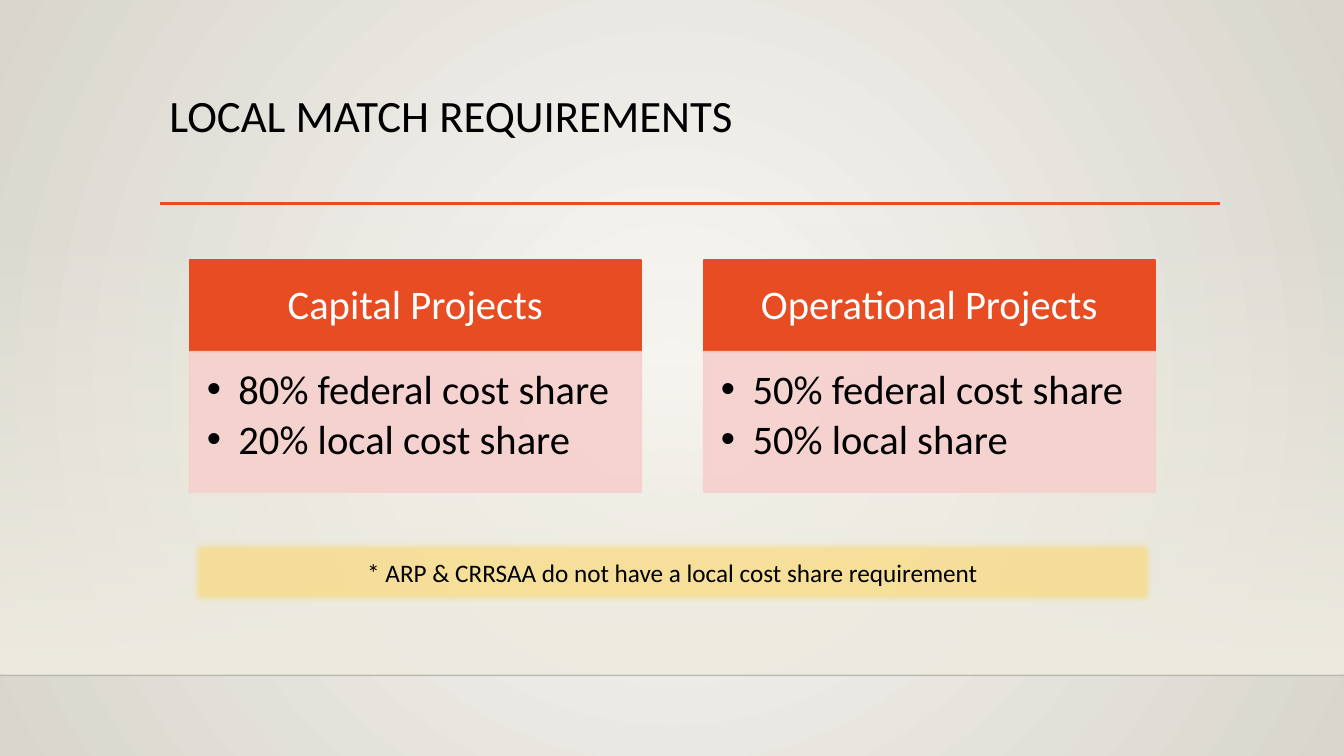
import lxml.etree
import pptx
import pptx.dml.color
import pptx.enum.shapes
import pptx.enum.text
import pptx.oxml.ns
import pptx.util

Pt = pptx.util.Pt
qn = pptx.oxml.ns.qn
PP_ALIGN = pptx.enum.text.PP_ALIGN
ANCHOR = pptx.enum.text.MSO_ANCHOR

FONT = "Calibri"
COLORS = {
    "center": "F9F8F5", "edge": "D8D6CC", "floor": "EEECE1", "horizon": "000001",
    "accent": "E84C22", "pale": "F6D0CD", "note": "FFD147",
    "text": "000000", "white": "FFFFFF",
}
PROJECTS = [
    ("Capital Projects", ["80% federal cost share", "20% local cost share"]),
    ("Operational Projects", ["50% federal cost share", "50% local share"]),
]


def rgb(name):
    return pptx.dml.color.RGBColor.from_string(COLORS[name])


def add_element(parent, tag, **attributes):
    return lxml.etree.SubElement(parent, qn(tag), attributes)


def set_alpha(color_element, percent):
    add_element(color_element, "a:alpha", val=str(percent * 1000))


def set_gradient(fill, start, end):
    fill.gradient()
    for stop, name, position in zip(fill.gradient_stops, (start, end), (0, 1)):
        stop.color.rgb = rgb(name)
        stop.position = position


def add_rect(slide, box, fill=None, line=None, alpha=100):
    rect = slide.shapes.add_shape(
        pptx.enum.shapes.MSO_SHAPE.RECTANGLE, *(Pt(length) for length in box))
    rect.shadow.inherit = False
    if fill:
        rect.fill.solid()
        rect.fill.fore_color.rgb = rgb(fill)
    if line:
        rect.line.color.rgb = rgb(line)
        rect.line.width = Pt(1.25)
    else:
        rect.line.fill.background()
    if alpha < 100:
        for color in rect._element.spPr.iter(qn("a:srgbClr")):
            set_alpha(color, alpha)
    return rect


def add_line(slide, left, right, y, color, width, alpha=100):
    line = slide.shapes.add_connector(
        pptx.enum.shapes.MSO_CONNECTOR.STRAIGHT, Pt(left), Pt(y), Pt(right), Pt(y))
    line.line.color.rgb = rgb(color)
    line.line.width = Pt(width)
    if alpha < 100:
        set_alpha(next(line._element.spPr.iter(qn("a:srgbClr"))), alpha)
    add_element(line._element.spPr, "a:effectLst")


def set_insets(frame, left, top, right, bottom):
    frame.word_wrap = True
    frame.margin_left, frame.margin_top = Pt(left), Pt(top)
    frame.margin_right, frame.margin_bottom = Pt(right), Pt(bottom)


def style(paragraph, size, color, align, spacing=0.9):
    paragraph.alignment = align
    paragraph.line_spacing = spacing
    paragraph.font.name = FONT
    paragraph.font.size = Pt(size)
    paragraph.font.color.rgb = rgb(color)


def add_backdrop(slide, width, band_top, horizon):
    # Round glow over the whole slide
    background = slide.background.fill
    set_gradient(background, "center", "edge")
    direction = next(slide._element.iter(qn("a:lin")))
    glow = lxml.etree.Element(qn("a:path"), path="circle")
    add_element(glow, "a:fillToRect", l="50000", t="50000", r="50000", b="50000")
    direction.getparent().replace(direction, glow)

    # Band that fades in down to the horizon
    band = add_rect(slide, (0, band_top, width, horizon - band_top))
    set_gradient(band.fill, "floor", "floor")
    band.fill.gradient_angle = 270
    set_alpha(next(band._element.spPr.iter(qn("a:srgbClr"))), 0)
    add_line(slide, 0, width, horizon, "horizon", 1, alpha=20)


def add_heading(slide, box, text):
    left, top, width, height = box
    title = slide.shapes.title
    title.left, title.top, title.width, title.height = (Pt(length) for length in box)
    frame = title.text_frame
    frame.text = text
    frame.vertical_anchor = ANCHOR.TOP
    set_insets(frame, 7.2, 3.6, 7.2, 3.6)
    style(frame.paragraphs[0], 32, "text", PP_ALIGN.LEFT)
    add_line(slide, left + 0.7, left + width + 0.7, top + height - 1.4, "accent", 2.5)


def add_project(slide, box, name, shares):
    left, top, width, height = box
    header_height = 65.5

    # Coloured header
    header = add_rect(slide, (left, top, width, header_height), "accent", "accent")
    frame = header.text_frame
    frame.text = name
    frame.vertical_anchor = ANCHOR.MIDDLE
    set_insets(frame, 16.5, 9.4, 16.5, 9.4)
    style(frame.paragraphs[0], 29, "white", PP_ALIGN.CENTER)

    # Bulleted cost shares
    body = add_rect(slide, (left, top + header_height, width, height - header_height),
                    "pale", "pale", alpha=90)
    frame = body.text_frame
    frame.text = "\n".join(shares)
    frame.vertical_anchor = ANCHOR.TOP
    set_insets(frame, 12.4, 12.4, 16.5, 18)
    for share in frame.paragraphs:
        properties = share._p.get_or_add_pPr()
        properties.set("marL", str(Pt(22.5)))
        properties.set("indent", str(-Pt(22.5)))
        add_element(properties, "a:buFont", typeface="Arial")
        add_element(properties, "a:buChar", char="•")
        style(share, 29, "text", PP_ALIGN.LEFT)
        share.space_after = Pt(4.35)


def add_projects(slide, box, gap):
    left, top, width, height = box
    column = (width - gap * (len(PROJECTS) - 1)) / len(PROJECTS)
    for index, (name, shares) in enumerate(PROJECTS):
        add_project(slide, (left + index * (column + gap), top, column, height),
                    name, shares)


def add_note(slide, box, text):
    note = add_rect(slide, box, "note", alpha=46)
    effects = note._element.spPr.find(qn("a:effectLst"))
    add_element(effects, "a:softEdge", rad=str(Pt(5)))
    frame = note.text_frame
    frame.text = text
    frame.vertical_anchor = ANCHOR.MIDDLE
    set_insets(frame, 7.2, 3.6, 7.2, 3.6)
    style(frame.paragraphs[0], 18, "text", PP_ALIGN.CENTER, spacing=1.0)


def main():
    deck = pptx.Presentation()
    deck.slide_width, deck.slide_height = Pt(960), Pt(540)
    slide = deck.slides.add_slide(deck.slide_layouts[5])
    left, width = 135.4, 689.8

    add_backdrop(slide, 960, 159, 482.4)
    add_heading(slide, (113.8, 63.4, 756.7, 83.5), "LOCAL MATCH REQUIREMENTS")
    add_projects(slide, (left, 185.8, width, 165.6), gap=44.6)
    add_note(slide, (left, 384.5, width, 48.2),
             "* ARP & CRRSAA do not have a local cost share requirement")
    deck.save("out.pptx")


if __name__ == "__main__":
    main()
